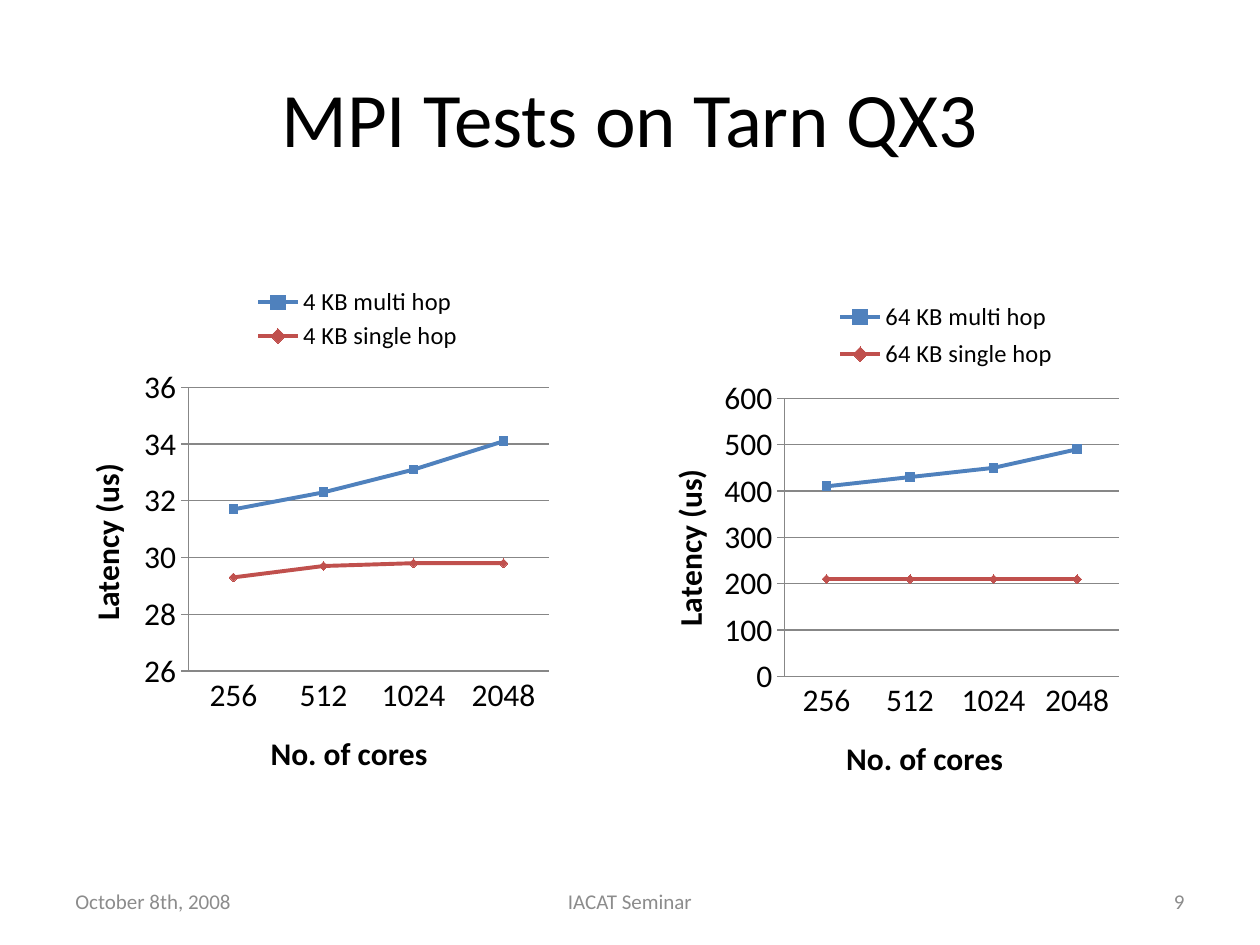
from lxml import etree
from pptx import Presentation
from pptx import util as u
from pptx.chart.data import CategoryChartData
from pptx.dml.color import RGBColor
from pptx.enum import chart as ch, text
from pptx.oxml.ns import qn

BLACK = RGBColor(0x00, 0x00, 0x00)
GREY = RGBColor(0x8C, 0x8C, 0x8C)
AXIS = RGBColor(0x87, 0x87, 0x87)
BLUE = RGBColor(0x4F, 0x81, 0xBD)
RED = RGBColor(0xC0, 0x50, 0x4D)
FONT = "Calibri"
CORES = ["256", "512", "1024", "2048"]
STYLES = [(BLUE, ch.XL_MARKER_STYLE.SQUARE), (RED, ch.XL_MARKER_STYLE.DIAMOND)]


def set_font(font, size, color=BLACK, bold=False):
    """Apply the slide typeface with a size, colour and weight."""
    font.name, font.size, font.bold = FONT, u.Pt(size), bold
    font.color.rgb = color


def add_label(slide, box, words, size, color, align):
    """Add one vertically centred line of text in a box."""
    tf = slide.shapes.add_textbox(*map(u.Cm, box)).text_frame
    tf.word_wrap = True
    tf.vertical_anchor = text.MSO_ANCHOR.MIDDLE
    p = tf.paragraphs[0]
    p.text, p.alignment = words, align
    set_font(p.font, size, color)


def set_layout(element, index, place, inner=False):
    """Place a chart part by fractions of the chart: x, y and maybe w, h."""
    for old in element.findall(qn("c:layout")):
        element.remove(old)
    layout = etree.Element(qn("c:layout"))
    manual = etree.SubElement(layout, qn("c:manualLayout"))
    settings = [("layoutTarget", "inner")] if inner else []
    settings += [("xMode", "edge"), ("yMode", "edge")]
    settings += zip("xywh", place)
    for tag, val in settings:
        etree.SubElement(manual, qn(f"c:{tag}")).set("val", str(val))
    element.insert(index, layout)


def style_axis(axis, title, place, tick):
    """Title an axis and set its line and tick marks."""
    p = axis.axis_title.text_frame.paragraphs[0]
    p.text = title
    set_font(p.font, 18, bold=True)
    set_layout(axis.axis_title._element, 1, place)
    axis.major_tick_mark = tick
    axis.minor_tick_mark = ch.XL_TICK_MARK.NONE
    axis.format.line.color.rgb = AXIS
    axis.format.line.width = u.Pt(0.75)


def add_latency_chart(slide, box, series, scale, places):
    """Add a line chart of latency against the number of cores."""
    data = CategoryChartData()
    data.categories = CORES
    for name, values in series.items():
        data.add_series(name, values)
    chart = slide.shapes.add_chart(
        ch.XL_CHART_TYPE.LINE_MARKERS, *map(u.Cm, box), data).chart
    set_font(chart.font, 18)
    chart.has_title = False
    chart.has_legend = True
    chart.legend.position = ch.XL_LEGEND_POSITION.RIGHT
    chart.legend.include_in_layout = False
    set_font(chart.legend.font, 14)
    set_layout(chart.legend._element, 1, places["legend"])
    set_layout(chart._chartSpace.chart.plotArea, 0, places["plot"], inner=True)

    style_axis(chart.category_axis, "No. of cores", places["cores"],
               ch.XL_TICK_MARK.NONE)
    axis = chart.value_axis
    style_axis(axis, "Latency (us)", places["latency"], ch.XL_TICK_MARK.OUTSIDE)
    axis.minimum_scale, axis.maximum_scale, axis.major_unit = scale
    axis.tick_labels.number_format = "General"
    axis.tick_labels.number_format_is_linked = False
    axis.major_gridlines.format.line.color.rgb = AXIS
    axis.major_gridlines.format.line.width = u.Pt(0.75)

    chart.plots[0].vary_by_categories = False
    for s, (color, marker) in zip(chart.plots[0].series, STYLES):
        s.smooth = False
        s.format.line.color.rgb = color
        s.format.line.width = u.Pt(2.25)
        s.marker.style, s.marker.size = marker, 5
        s.marker.format.fill.solid()
        s.marker.format.fill.fore_color.rgb = color
        s.marker.format.line.color.rgb = color


def add_footer(slide, box):
    """Add the date, event and page number across a footer box."""
    left, top, width, height = box
    side, middle = 5.92, 8.05
    align = text.PP_ALIGN
    parts = [("October 8th, 2008", 0, side, align.LEFT),
             ("IACAT Seminar", (width - middle) / 2, middle, align.CENTER),
             ("9", width - side, side, align.RIGHT)]
    for words, offset, w, al in parts:
        add_label(slide, (left + offset, top, w, height), words, 12, GREY, al)


def main():
    """Build the slide and save it."""
    prs = Presentation()
    prs.slide_width, prs.slide_height = u.Cm(25.4), u.Cm(19.05)
    slide = prs.slides.add_slide(prs.slide_layouts[6])
    add_label(slide, (1.27, 0.76, 22.86, 3.18), "MPI Tests on Tarn QX3", 44,
              BLACK, text.PP_ALIGN.CENTER)
    add_latency_chart(
        slide, (1.27, 5.28, 11, 11),
        {"4 KB multi hop": [31.7, 32.3, 33.1, 34.1],
         "4 KB single hop": [29.3, 29.7, 29.8, 29.8]},
        (26, 36, 2),
        {"plot": (0.23, 0.23, 0.66, 0.52), "legend": (0.33, 0.04, 0.42, 0.13),
         "cores": (0.37, 0.85), "latency": (0.03, 0.36)})
    add_latency_chart(
        slide, (12.9, 5.72, 11.23, 11),
        {"64 KB multi hop": [410, 430, 450, 490],
         "64 KB single hop": [210, 210, 210, 210]},
        (0, 600, 100),
        {"plot": (0.26, 0.21, 0.6, 0.51), "legend": (0.33, 0.02, 0.44, 0.15),
         "cores": (0.36, 0.82), "latency": (0.04, 0.33)})
    add_footer(slide, (1.27, 17.65, 22.86, 1.02))
    prs.save("out.pptx")


if __name__ == "__main__":
    main()
